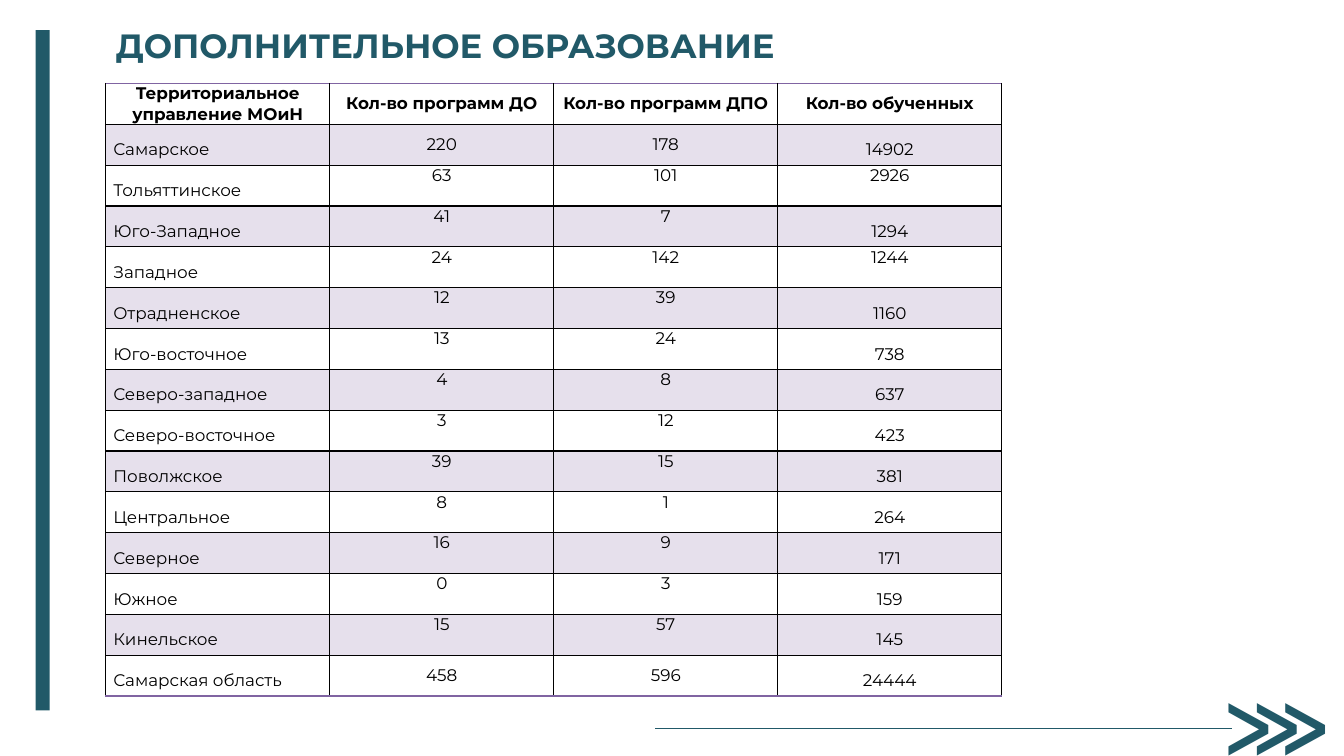
import pptx
import pptx.util
import pptx.dml.color
import pptx.enum.shapes
import pptx.enum.text
import pptx.oxml
import pptx.oxml.ns

Pt = pptx.util.Pt
ALIGN = pptx.enum.text.PP_ALIGN
ANCHOR = pptx.enum.text.MSO_ANCHOR
TEAL = pptx.dml.color.RGBColor(0x21, 0x59, 0x68)
PURPLE = pptx.dml.color.RGBColor(0x80, 0x64, 0xA2)
TINT = pptx.dml.color.RGBColor(0xE6, 0xE0, 0xEC)
BLACK = pptx.dml.color.RGBColor(0, 0, 0)
NS = pptx.oxml.ns.nsdecls("a")

HEADERS = ["Территориальное управление МОиН", "Кол-во программ ДО",
           "Кол-во программ ДПО", "Кол-во обученных"]
REGIONS = [
    ("Самарское", 220, 178, 14902),
    ("Тольяттинское", 63, 101, 2926),
    ("Юго-Западное", 41, 7, 1294),
    ("Западное", 24, 142, 1244),
    ("Отрадненское", 12, 39, 1160),
    ("Юго-восточное", 13, 24, 738),
    ("Северо-западное", 4, 8, 637),
    ("Северо-восточное", 3, 12, 423),
    ("Поволжское", 39, 15, 381),
    ("Центральное", 8, 1, 264),
    ("Северное", 16, 9, 171),
    ("Южное", 0, 3, 159),
    ("Кинельское", 15, 57, 145),
    ("Самарская область", 458, 596, 24444),
]
ROWS = [HEADERS] + REGIONS
LAST = len(ROWS) - 1


def write(tf, text, size=12, font="Montserrat", color=BLACK, bold=False,
          align=ALIGN.LEFT, spacing=1.0):
    p = tf.paragraphs[0]
    p.alignment = align
    p.line_spacing = spacing
    r = p.add_run()
    r.text = text
    r.font.size = Pt(size)
    r.font.name = font
    r.font.bold = bold
    r.font.color.rgb = color


def add_border(cell, side):
    # Borders come before the fill in the cell properties
    cell._tc.get_or_add_tcPr().insert(0, pptx.oxml.parse_xml(
        f'<a:{side} {NS} w="12700"><a:solidFill><a:srgbClr val="{PURPLE}"/>'
        f'</a:solidFill></a:{side}>'))


prs = pptx.Presentation()
prs.slide_width, prs.slide_height = Pt(960), Pt(540)
slide = prs.slides.add_slide(prs.slide_layouts[5])

# Side bar
bar = slide.shapes.add_shape(pptx.enum.shapes.MSO_SHAPE.RECTANGLE,
                             Pt(25.5), Pt(21.5), Pt(10), Pt(486))
bar.shadow.inherit = False
bar.fill.solid()
bar.fill.fore_color.rgb = TEAL
bar.line.fill.background()

# Title
title = slide.shapes.title
title.left, title.top, title.width, title.height = Pt(75.6), Pt(14.5), Pt(841), Pt(36.4)
title.text_frame.word_wrap = True
title.text_frame.auto_size = pptx.enum.text.MSO_AUTO_SIZE.NONE
title.text_frame.vertical_anchor = ANCHOR.TOP
write(title.text_frame, "ДОПОЛНИТЕЛЬНОЕ ОБРАЗОВАНИЕ", size=24, color=TEAL, bold=True)

# Arrow mark and line at the bottom
mark = slide.shapes.add_textbox(Pt(867), Pt(481), Pt(70.5), Pt(72.7))
mark.text_frame.word_wrap = True
write(mark.text_frame, "⋙", size=54, font="Arial", color=TEAL, bold=True)

line = slide.shapes.add_connector(pptx.enum.shapes.MSO_CONNECTOR.STRAIGHT,
                                  Pt(468), Pt(520.7), Pt(880), Pt(520.7))
line.line.color.rgb = TEAL
line.line.width = Pt(0.75)
line._element.spPr.append(pptx.oxml.parse_xml(f"<a:effectLst {NS}/>"))

# Table without a built-in style
frame = slide.shapes.add_table(len(ROWS), len(HEADERS),
                               Pt(75.6), Pt(59.6), Pt(640), Pt(437.7))
table = frame.table
table.first_row = table.horz_banding = False
tblPr = table._tbl.tblPr
tblPr.remove(tblPr.find(pptx.oxml.ns.qn("a:tableStyleId")))
for row in table.rows:
    row.height = Pt(29.18)

for i, values in enumerate(ROWS):
    for j, value in enumerate(values):
        cell = table.cell(i, j)
        cell.margin_left = cell.margin_right = Pt(5.4)
        cell.margin_top = cell.margin_bottom = Pt(0)

        # Counts sit at the top, except in the outer rows; two totals do too
        at_top = (j in (1, 2) and i not in (0, 1, LAST)) or (j == 3 and i in (2, 4))
        cell.vertical_anchor = ANCHOR.TOP if at_top else ANCHOR.MIDDLE
        loose = i > 0 and j in (0, 3) and not at_top
        write(cell.text_frame, str(value), bold=i == 0,
              align=ALIGN.JUSTIFY if i > 0 and j == 0 else ALIGN.CENTER,
              spacing=1.5 if loose else 1.0)

        # Odd rows are tinted
        if i % 2:
            cell.fill.solid()
            cell.fill.fore_color.rgb = TINT
        else:
            cell.fill.background()

        # Rules around the header and under the last row
        if i in (0, LAST):
            add_border(cell, "lnB")
        if i == 0:
            add_border(cell, "lnT")

prs.save("out.pptx")
